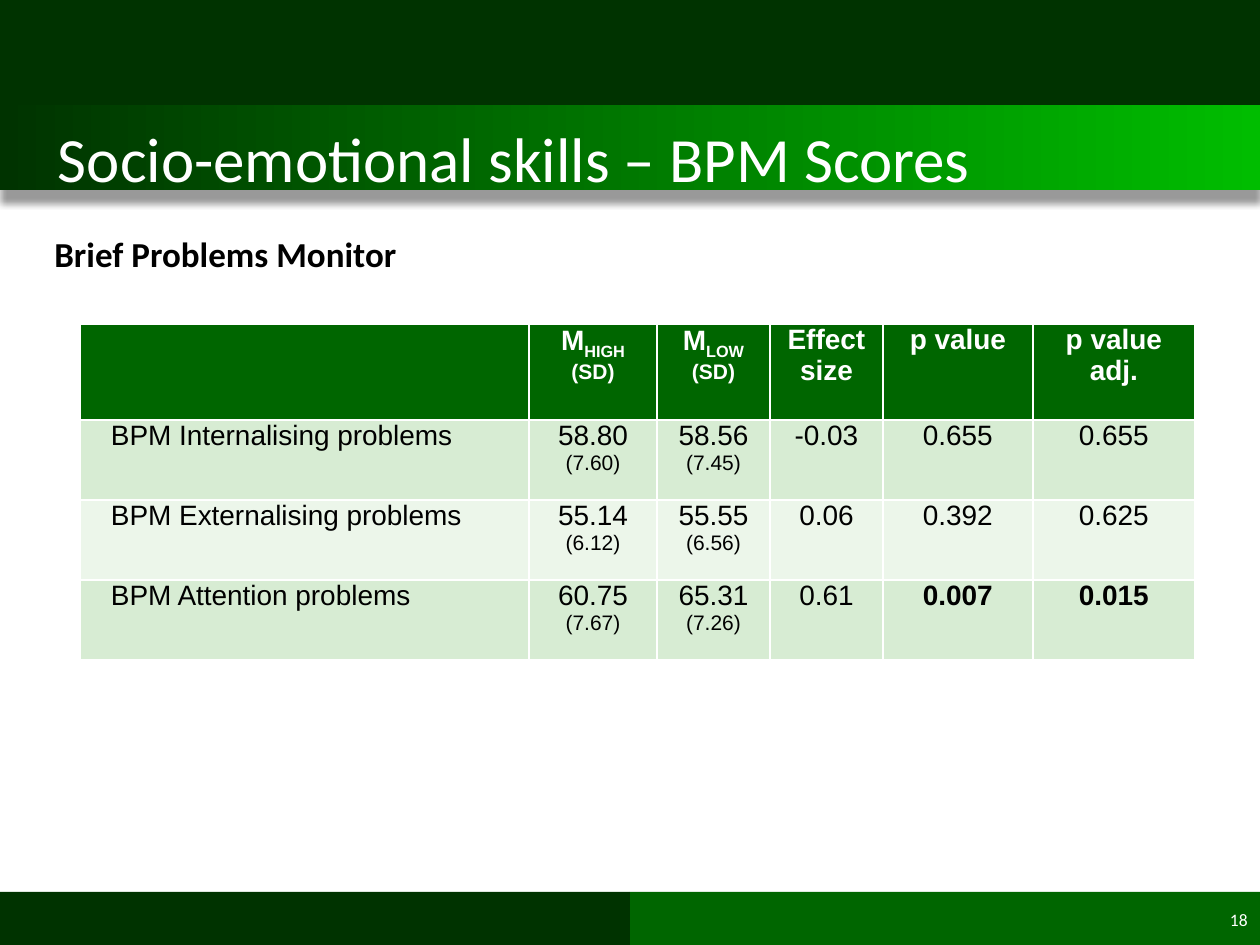
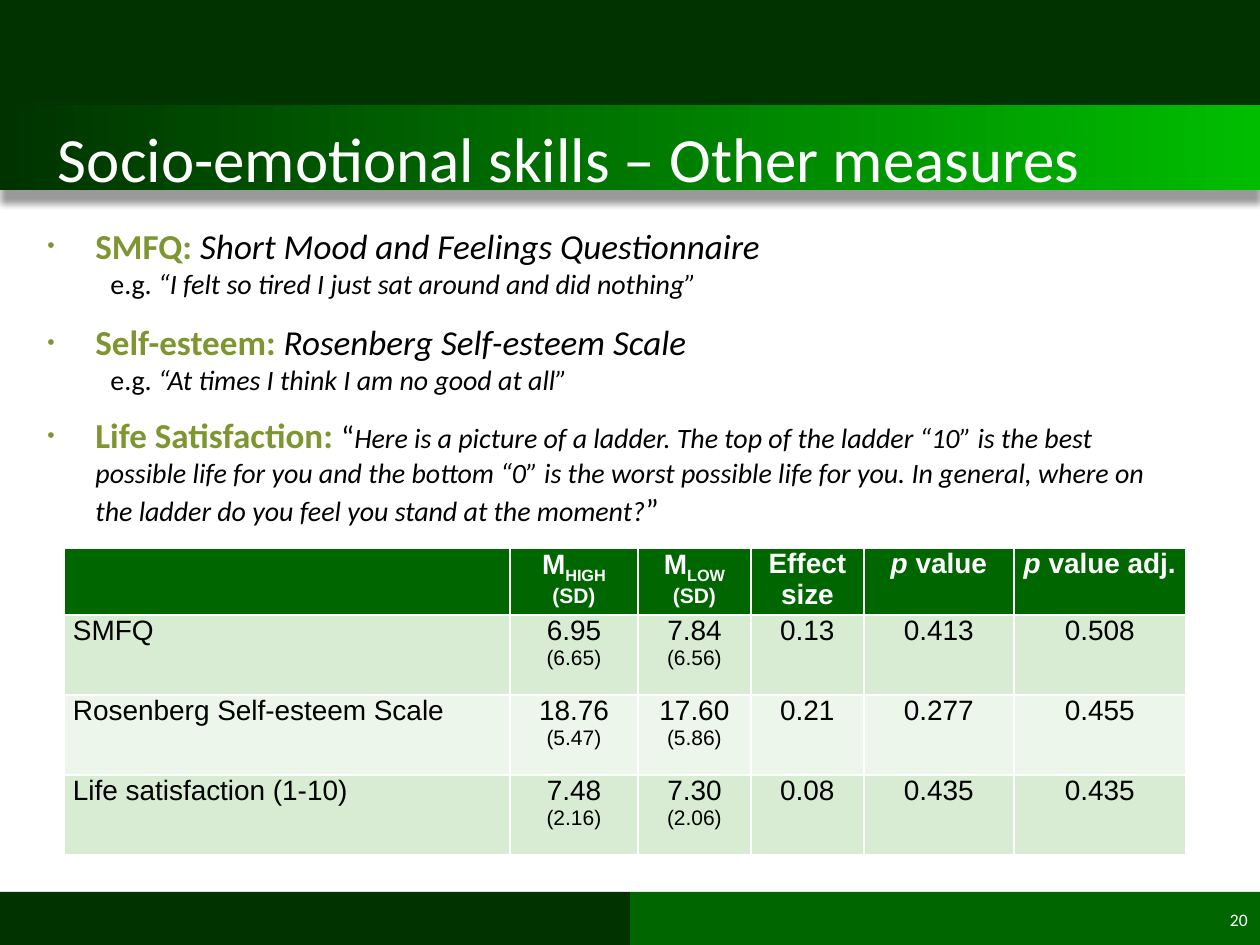
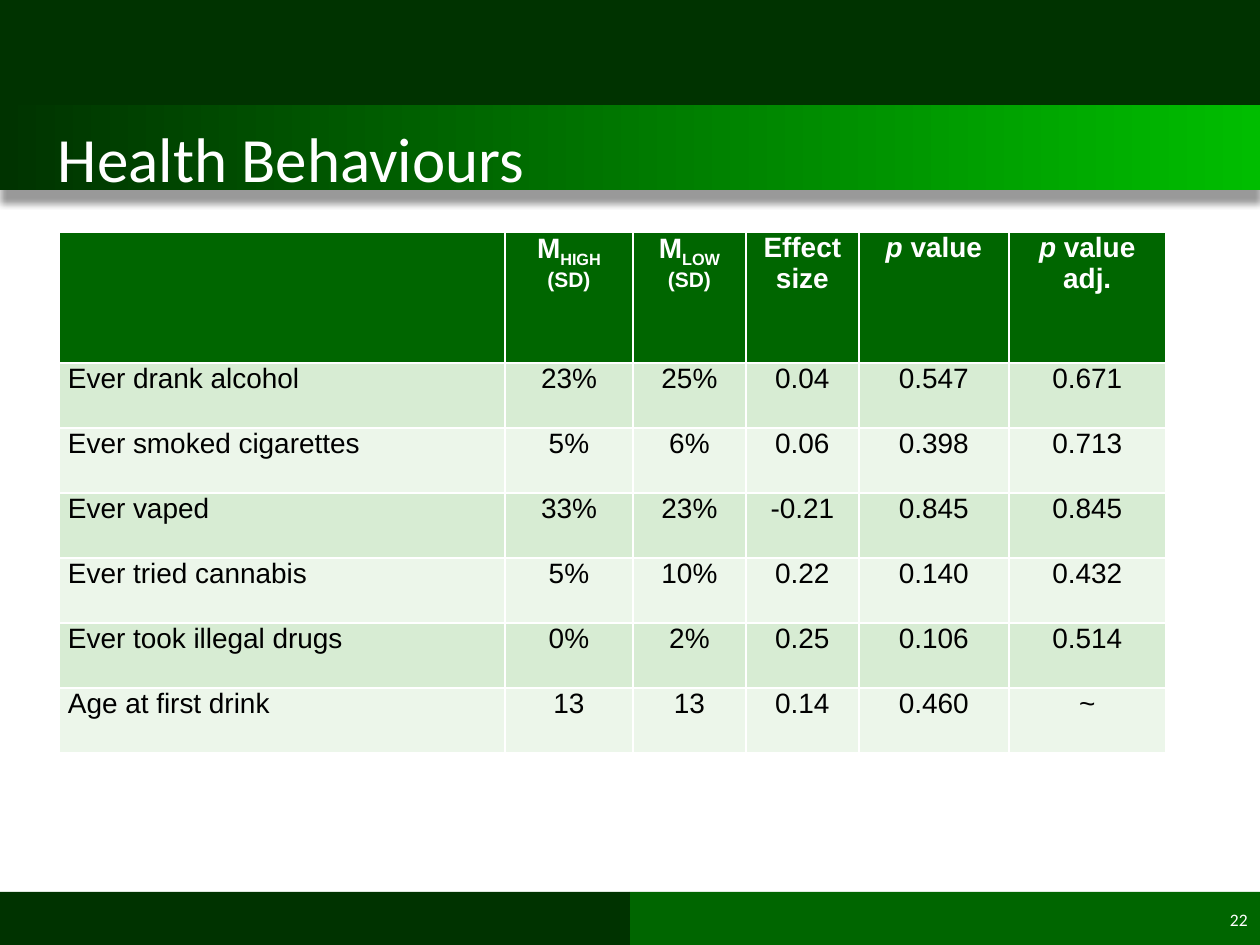
import pptx
import pptx.util
import pptx.dml.color
import pptx.enum.shapes
import pptx.enum.text
import pptx.oxml
import pptx.oxml.ns

SCALE = 914400 / 126
PAGE_WIDTH, PAGE_HEIGHT = 1260, 945
DARK, GREEN, BRIGHT = "003300", "006600", "00BD00"
STRIPES = ["D7ECD3", "ECF6EA"]
OLIVE, WHITE, BLACK = "7E9632", "FFFFFF", "000000"
ALIGN = pptx.enum.text.PP_ALIGN
MIDDLE = pptx.enum.text.MSO_ANCHOR.MIDDLE
TITLE_ONLY = 5

TITLE = {"name": "Calibri", "size": 36, "color": WHITE}
NUMBER = {"name": "Calibri", "size": 10, "color": WHITE}
BODY = {"name": "Calibri", "size": 20, "color": BLACK}
TERM = {"bold": True, "color": OLIVE}
ITALIC = {"italic": True}
EXAMPLE = {"size": 16}
QUOTE = {"size": 16, "italic": True}
MARK = {"size": 18}
HEAD = {"name": "Arial", "size": 16, "color": WHITE, "bold": True}
CELL = {"name": "Arial", "size": 16, "color": BLACK, "bold": False}
SMALL = {"size": 12}
LOWERED = {"baseline": -25000}


def px(length):
    return pptx.util.Emu(round(length * SCALE))


def rgb(value):
    return pptx.dml.color.RGBColor.from_string(value)


def xml(markup):
    return pptx.oxml.parse_xml(markup.replace(">", f" {pptx.oxml.ns.nsdecls('a')}>", 1)
                               if "/>" not in markup.split(">")[0] + ">"
                               else markup.replace("/>", f" {pptx.oxml.ns.nsdecls('a')}/>", 1))


def set_all(target, values):
    for name, value in values.items():
        setattr(target, name, value)


def write(para, spans, base, align=ALIGN.LEFT):
    para.alignment = align
    for text, changes in spans:
        span = para.add_run()
        span.text = text
        for name, value in {**base, **changes}.items():
            if name == "color":
                span.font.color.rgb = rgb(value)
            elif name == "baseline":
                span._r.get_or_add_rPr().set("baseline", str(value))
            else:
                setattr(span.font, name, pptx.util.Pt(value) if name == "size" else value)


def add_text_box(page, box):
    frame = page.shapes.add_textbox(*map(px, box)).text_frame
    frame.word_wrap = True
    return frame


def add_band(page, box, color):
    band = page.shapes.add_shape(pptx.enum.shapes.MSO_SHAPE.RECTANGLE, *map(px, box))
    band.shadow.inherit = False
    band.line.fill.background()
    band.fill.solid()
    band.fill.fore_color.rgb = rgb(color)
    return band


def add_title_band(page, box):
    band = add_band(page, box, GREEN)
    band.fill.gradient()
    band.fill.gradient_angle = 0
    for stop, color in zip(band.fill.gradient_stops, [DARK, BRIGHT]):
        stop.color.rgb = rgb(color)
    effects = band.element.spPr.find(pptx.oxml.ns.qn("a:effectLst"))
    effects.append(xml(
        '<a:outerShdw blurRad="50800" dist="88900" dir="5400000" rotWithShape="0">'
        '<a:srgbClr val="000000"><a:alpha val="40000"/></a:srgbClr></a:outerShdw>'))


def add_page(deck, heading, number):
    page = deck.slides.add_slide(deck.slide_layouts[TITLE_ONLY])
    half = PAGE_WIDTH // 2
    add_band(page, (half, 892, half, 53), GREEN)
    add_band(page, (0, 892, half, 53), DARK)
    add_title_band(page, (0, 86, PAGE_WIDTH, 104))
    add_band(page, (0, 0, PAGE_WIDTH, 105), DARK)

    title = page.shapes.title
    page.shapes.element.append(title.element)
    set_all(title, {"left": px(20), "top": px(106), "width": px(1240), "height": px(102)})
    set_all(title.text_frame, {"margin_left": px(38), "vertical_anchor": MIDDLE, "word_wrap": True,
                               "auto_size": pptx.enum.text.MSO_AUTO_SIZE.NONE})
    write(title.text_frame.paragraphs[0], [(heading, {})], TITLE)

    footer = add_text_box(page, (1113, 895, 147, 50))
    footer.vertical_anchor = MIDDLE
    write(footer.paragraphs[0], [(str(number), {})], NUMBER, ALIGN.RIGHT)
    return page


def add_measures(page, box, measures):
    frame = add_text_box(page, box)
    for index, (gap, bulleted, spans) in enumerate(measures):
        para = frame.paragraphs[0] if index == 0 else frame.add_paragraph()
        properties = para._p.get_or_add_pPr()
        indent = 48 if bulleted else 63
        properties.set("marL", str(px(indent)))
        properties.set("indent", str(px(-indent if bulleted else 0)))
        if bulleted:
            for markup in ('<a:buSzPct val="60000"/>', '<a:buFont typeface="Arial"/>',
                           '<a:buChar char="•"/>'):
                properties.append(xml(markup))
        if gap:
            para.space_before = pptx.util.Pt(gap)
        write(para, spans, BODY)


def header_cells(p_changes):
    means = [[[("M", {}), (level, LOWERED)], [("(SD)", SMALL)]] for level in ("HIGH", "LOW")]
    p_values = [[[("p", p_changes), (ending, {})]] for ending in (" value", " value adj.")]
    return [[[]], *means, [[("Effect size", {})]], *p_values]


def body_cells(row):
    cells = []
    for value in row:
        text, *rest = value.split("|")
        changes = {"bold": True} if text.startswith("*") else {}
        cells.append([[(text.strip("*"), changes)], *[[(part, SMALL)] for part in rest]])
    return cells


def add_scores(page, left, top, widths, heights, rows, p_changes=ITALIC, label_margin=9):
    head_height, row_height = heights
    total = head_height + row_height * len(rows)
    table = page.shapes.add_table(len(rows) + 1, len(widths),
                                  *map(px, (left, top, sum(widths), total))).table
    for column, width in zip(table.columns, widths):
        column.width = px(width)
    content = [header_cells(p_changes), *map(body_cells, rows)]
    for row_index, cells in enumerate(content):
        is_head = row_index == 0
        table.rows[row_index].height = px(head_height if is_head else row_height)
        color = GREEN if is_head else STRIPES[(row_index - 1) % 2]
        for column_index, lines in enumerate(cells):
            cell = table.cell(row_index, column_index)
            is_label = column_index == 0
            set_all(cell, {"margin_left": px(label_margin if is_label else 9), "margin_right": px(9),
                           "margin_top": px(1 if is_head and column_index in (1, 2) else 0),
                           "margin_bottom": px(0)})
            cell.fill.solid()
            cell.fill.fore_color.rgb = rgb(color)
            for line_index, spans in enumerate(lines):
                frame = cell.text_frame
                para = frame.paragraphs[0] if line_index == 0 else frame.add_paragraph()
                write(para, spans, HEAD if is_head else CELL,
                      ALIGN.LEFT if is_label else ALIGN.CENTER)


def score_widths(label, last):
    return [label, 128, 113, 113, 150, last]


def build_problems(deck):
    page = add_page(deck, "Socio-emotional skills – BPM Scores", 18)
    add_scores(page, 80, 324, score_widths(449, 162), (96, 80), [
        ["BPM Internalising problems", "58.80|(7.60)", "58.56|(7.45)", "-0.03", "0.655", "0.655"],
        ["BPM Externalising problems", "55.14|(6.12)", "55.55|(6.56)", "0.06", "0.392", "0.625"],
        ["BPM Attention problems", "60.75|(7.67)", "65.31|(7.26)", "0.61", "*0.007", "*0.015"],
    ], p_changes={}, label_margin=31)
    frame = add_text_box(page, (42, 226, 1183, 60))
    write(frame.paragraphs[0], [("Brief Problems Monitor", {"bold": True})], BODY)


def build_other_measures(deck):
    page = add_page(deck, "Socio-emotional skills – Other measures", 20)
    add_measures(page, (35, 218, 1155, 306), [
        (0, True, [("SMFQ: ", TERM), ("Short Mood and Feelings Questionnaire", ITALIC)]),
        (0, False, [("e.g. ", EXAMPLE),
                    ("“I felt so tired I just sat around and did nothing”", QUOTE)]),
        (12, True, [("Self-esteem: ", TERM), ("Rosenberg Self-esteem Scale", ITALIC)]),
        (0, False, [("e.g. ", EXAMPLE), ("“At times I think I am no good at all”", QUOTE)]),
        (10, True, [("Life Satisfaction: ", TERM), ("“", MARK),
                    ("Here is a picture of a ladder. The top of the ladder “10” is the best "
                     "possible life for you and the bottom “0” is the worst possible life for "
                     "you. In general, where on the ladder do you feel you stand at the moment?",
                     QUOTE), ("”", MARK)]),
    ])
    add_scores(page, 64, 548, score_widths(446, 172), (67, 80), [
        ["SMFQ", "6.95|(6.65)", "7.84|(6.56)", "0.13", "0.413", "0.508"],
        ["Rosenberg Self-esteem Scale", "18.76|(5.47)", "17.60|(5.86)", "0.21", "0.277", "0.455"],
        ["Life satisfaction (1-10)", "7.48|(2.16)", "7.30|(2.06)", "0.08", "0.435", "0.435"],
    ])


def build_health(deck):
    page = add_page(deck, "Health Behaviours", 22)
    add_scores(page, 59, 232, score_widths(446, 157), (131, 65), [
        ["Ever drank alcohol", "23%", "25%", "0.04", "0.547", "0.671"],
        ["Ever smoked cigarettes", "5%", "6%", "0.06", "0.398", "0.713"],
        ["Ever vaped", "33%", "23%", "-0.21", "0.845", "0.845"],
        ["Ever tried cannabis", "5%", "10%", "0.22", "0.140", "0.432"],
        ["Ever took illegal drugs", "0%", "2%", "0.25", "0.106", "0.514"],
        ["Age at first drink", "13", "13", "0.14", "0.460", "~"],
    ])


def main():
    deck = pptx.Presentation()
    set_all(deck, {"slide_width": px(PAGE_WIDTH), "slide_height": px(PAGE_HEIGHT)})
    for build in (build_problems, build_other_measures, build_health):
        build(deck)
    deck.save("out.pptx")


if __name__ == "__main__":
    main()
